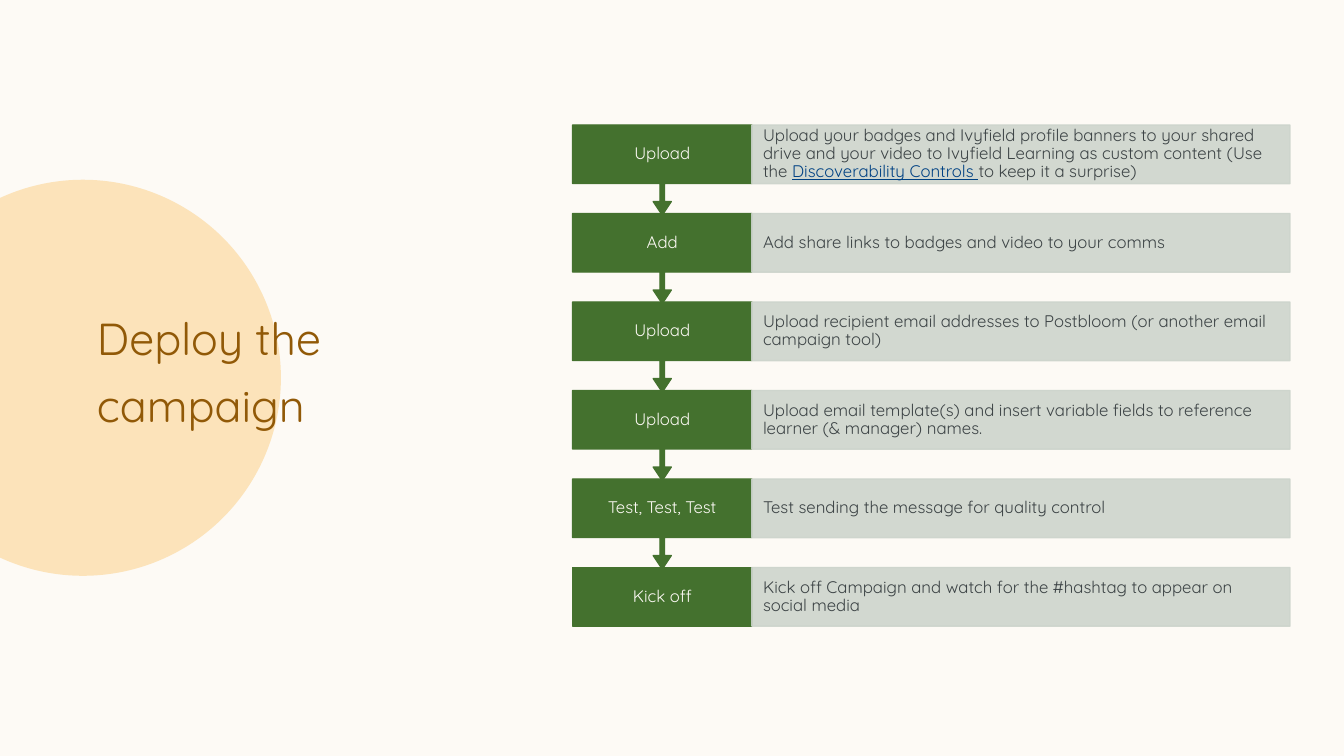
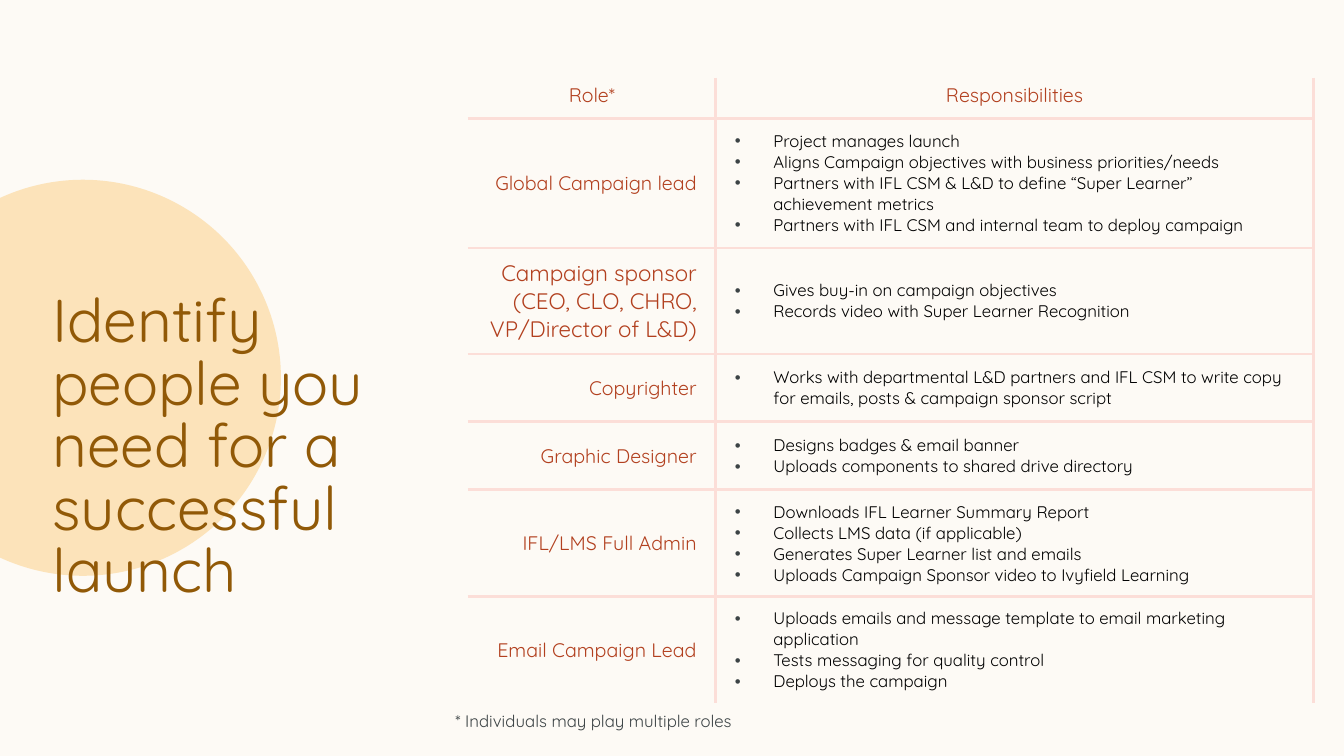
"""Build two campaign launch slides: a deployment flow and a table of roles."""
from dataclasses import dataclass

from lxml.etree import SubElement as Sub
from pptx import Presentation
from pptx.dml.color import RGBColor as Rgb
from pptx.enum.shapes import MSO_SHAPE as Kind
from pptx.enum.text import MSO_ANCHOR as Anchor, MSO_AUTO_SIZE as Auto, PP_ALIGN as Align
from pptx.oxml.ns import qn
from pptx.util import Cm, Pt


@dataclass(frozen=True)
class Theme:
    font: str = "Quicksand"
    paper: str = "FDFAF5"
    sun: str = "FCE3BA"
    title: str = "915907"
    green: str = "44712E"
    sage: str = "CDD4CC"
    ink: str = "3C4345"
    link: str = "004183"
    rust: str = "B2401F"
    rule: str = "FCDED8"
    black: str = "000000"
    small: float = 12
    mid: float = 14
    large: float = 16
    head: float = 32
    huge: float = 43.2
    line: float = 2.25


@dataclass(frozen=True)
class Box:
    left: float
    top: float
    width: float
    height: float

    def cm(self) -> tuple:
        return Cm(self.left), Cm(self.top), Cm(self.width), Cm(self.height)


@dataclass(frozen=True)
class Step:
    name: str
    text: str
    link: str = ""
    rest: str = ""


@dataclass(frozen=True)
class Role:
    name: str
    tasks: tuple
    height: float
    size: float = 14


LOOK = Theme()
STEPS = (
    Step("Upload",
         "Upload your badges and Ivyfield profile banners to your shared drive and your "
         "video to Ivyfield Learning as custom content (Use the ",
         "Discoverability Controls ", "to keep it a surprise)"),
    Step("Add", "Add share links to badges and video to your comms"),
    Step("Upload", "Upload recipient email addresses to Postbloom (or another email campaign tool)"),
    Step("Upload", "Upload email template(s) and insert variable fields to reference "
                   "learner (& manager) names."),
    Step("Test, Test, Test", "Test sending the message for quality control"),
    Step("Kick off", "Kick off Campaign and watch for the #hashtag to appear on social media"),
)
ROLES = (
    Role("Global Campaign lead", (
        "Project manages launch",
        "Aligns Campaign objectives with business priorities/needs",
        "Partners with IFL CSM & L&D to define “Super Learner” achievement metrics",
        "Partners with IFL CSM and internal team to deploy campaign"), 3.27),
    Role("Campaign sponsor\n(CEO, CLO, CHRO, VP/Director of L&D)", (
        "Gives buy-in on campaign objectives",
        "Records video with Super Learner Recognition"), 2.67, LOOK.large),
    Role("Copyrighter", (
        "Works with departmental L&D partners and IFL CSM to write copy for emails, "
        "posts & campaign sponsor script",), 1.71),
    Role("Graphic Designer", (
        "Designs badges & email banner",
        "Uploads components to shared drive directory"), 1.71),
    Role("IFL/LMS Full Admin", (
        "Downloads IFL Learner Summary Report",
        "Collects LMS data (if applicable)",
        "Generates Super Learner list and emails",
        "Uploads Campaign Sponsor video to Ivyfield Learning"), 2.7),
    Role("Email Campaign Lead", (
        "Uploads emails and message template to email marketing application",
        "Tests messaging for quality control",
        "Deploys the campaign"), 2.67),
)


def style(frame, size: float, color: str, align=Align.LEFT, space: float = 1.0) -> None:
    for para in frame.paragraphs:
        para.alignment = align
        para.line_spacing = space
        for run in para.runs:
            run.font.name = LOOK.font
            run.font.size = Pt(size)
            run.font.color.rgb = Rgb.from_string(color)


def inset(frame, side: float, edge: float = 0.0) -> None:
    frame.margin_left = frame.margin_right = Cm(side)
    frame.margin_top = frame.margin_bottom = Cm(edge)


def shape(slide, kind, box: Box, color: str, alpha: int = 100):
    item = slide.shapes.add_shape(kind, *box.cm())
    item.shadow.inherit = False
    item.line.width = Pt(1)
    for fill in (item.fill, item.line.fill):
        fill.solid()
        fill.fore_color.rgb = Rgb.from_string(color)
    if alpha < 100:
        for tint in item._element.spPr.iter(qn("a:srgbClr")):
            Sub(tint, qn("a:alpha"), val=str(alpha * 1000))
    item.text_frame.word_wrap = True
    item.text_frame.vertical_anchor = Anchor.MIDDLE
    return item


def title(slide, text: str, box: Box, size: float, space: float):
    head = slide.shapes.title
    head.left, head.top, head.width, head.height = box.cm()
    frame = head.text_frame
    frame.text = text
    frame.word_wrap = True
    frame.auto_size = Auto.NONE
    frame.vertical_anchor = Anchor.TOP
    inset(frame, 0, 0.13)
    style(frame, size, LOOK.title, space=space)
    return frame


def sun(slide, layout) -> None:
    disc = shape(slide, Kind.OVAL, Box(-2.9, 4.53, 9.98, 9.98), LOOK.sun)
    disc.line.fill.background()
    disc._element.nvSpPr.cNvPr.set("id", "99")
    layout.shapes._spTree.insert(2, disc._element)


def flow(slide) -> None:
    left, top, pitch, name, text, high = 14.43, 3.15, 2.23, 4.52, 13.56, 1.48
    arrow = 2.27
    for row, step in reversed(list(enumerate(STEPS))):
        y = top + row * pitch
        last = row == len(STEPS) - 1
        kind = Kind.RECTANGLE if last else Kind.DOWN_ARROW_CALLOUT
        card = shape(slide, kind, Box(left, y, name, high if last else arrow), LOOK.green)
        if not last:
            for spot, part in enumerate((0.05, 0.1, 0.15, 0.65)):
                card.adjustments[spot] = part
        card.text_frame.text = step.name
        inset(card.text_frame, 0.33)
        style(card.text_frame, LOOK.small, LOOK.paper, Align.CENTER, 0.9)

        note = shape(slide, Kind.RECTANGLE, Box(left + name, y, text, high), LOOK.sage, 89)
        frame = note.text_frame
        frame.text = step.text
        inset(frame, 0.28)
        for part in filter(None, (step.link, step.rest)):
            frame.paragraphs[0].add_run().text = part
        style(frame, LOOK.small, LOOK.ink, space=0.9)
        if step.link:
            font = frame.paragraphs[0].runs[1].font
            font.underline = True
            font.color.rgb = Rgb.from_string(LOOK.link)


def bullets(frame) -> None:
    for para in frame.paragraphs:
        props = para._p.get_or_add_pPr()
        props.set("marL", str(Cm(0.97)))
        props.set("indent", str(Cm(-0.97)))
        Sub(Sub(props, qn("a:buClr")), qn("a:srgbClr"), val=LOOK.ink)
        Sub(props, qn("a:buFont"), typeface="Arial")
        Sub(props, qn("a:buChar"), char="•")


def border(cell, sides: str) -> None:
    props = cell._tc.get_or_add_tcPr()
    for side in "LRTB":
        edge = Sub(props, qn(f"a:ln{side}"), w=str(Pt(LOOK.line)))
        if side in sides:
            Sub(Sub(edge, qn("a:solidFill")), qn("a:srgbClr"), val=LOOK.rule)
        else:
            Sub(edge, qn("a:noFill"))
    cell.fill.background()


def fill(cell, text: str, size: float, color: str, align) -> None:
    cell.text_frame.text = text
    inset(cell, 0.48, 0.28)
    cell.vertical_anchor = Anchor.MIDDLE
    style(cell.text_frame, size, color, align)


def grid(slide) -> None:
    highs = [1.02] + [role.height for role in ROLES]
    wides = (6.25, 15.06)
    box = Box(11.79, 1.96, sum(wides), sum(highs))
    table = slide.shapes.add_table(len(highs), len(wides), *box.cm()).table
    table.first_row = table.horz_banding = False
    for col, wide in zip(table.columns, wides):
        col.width = Cm(wide)
    for row, high in zip(table.rows, highs):
        row.height = Cm(high)
    for col, text in enumerate(("Role*", "Responsibilities")):
        cell = table.cell(0, col)
        fill(cell, text, LOOK.mid, LOOK.rust, Align.CENTER)
        cell.margin_top = 0
        cell.vertical_anchor = Anchor.BOTTOM
    for row, role in enumerate(ROLES, 1):
        fill(table.cell(row, 0), role.name, role.size, LOOK.rust, Align.RIGHT)
        cell = table.cell(row, 1)
        fill(cell, "\n".join(role.tasks), LOOK.small, LOOK.black, Align.LEFT)
        bullets(cell.text_frame)
    for row in range(len(highs)):
        sides = "R" + ("T" if row else "") + ("B" if row < len(ROLES) else "")
        border(table.cell(row, 0), sides)
        border(table.cell(row, 1), sides + "L")


def foot(slide) -> None:
    frame = slide.shapes.add_textbox(*Box(11.23, 17.78, 7.85, 0.77).cm()).text_frame
    frame.text = "* Individuals may play multiple roles"
    frame.word_wrap = True
    style(frame, LOOK.small, LOOK.ink)


def main() -> None:
    deck = Presentation()
    deck.slide_width, deck.slide_height = Cm(33.87), Cm(19.05)
    back = deck.slide_master.background.fill
    back.solid()
    back.fore_color.rgb = Rgb.from_string(LOOK.paper)
    layout = deck.slide_layouts[5]

    first = deck.slides.add_slide(layout)
    sun(first, layout)
    frame = title(first, "Deploy the\ncampaign", Box(2.44, 7.85, 12.5, 3.35), LOOK.head, 0.9)
    frame.paragraphs[1].space_before = Pt(13)
    flow(first)

    second = deck.slides.add_slide(layout)
    grid(second)
    foot(second)
    title(second, "Identify people you need for a successful launch",
          Box(1.32, 7.25, 9.9, 5.66), LOOK.huge, 0.86)
    deck.save("out.pptx")


if __name__ == "__main__":
    main()
